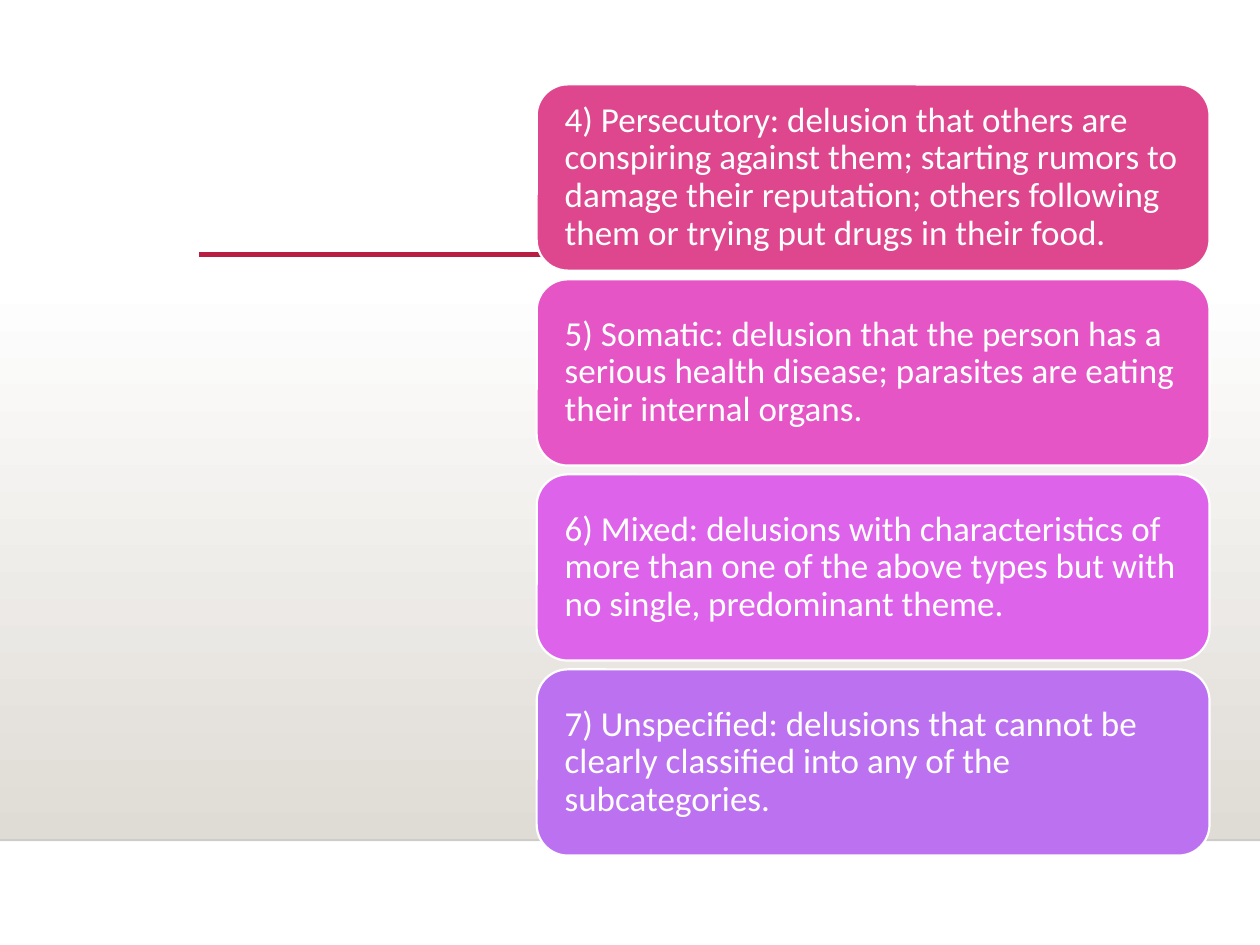
from lxml.etree import SubElement
from pptx import Presentation
from pptx.dml.color import RGBColor
from pptx.enum.shapes import MSO_CONNECTOR, MSO_SHAPE
from pptx.enum.text import MSO_ANCHOR, PP_ALIGN
from pptx.oxml.ns import qn
from pptx.util import Inches, Pt

WHITE = RGBColor(0xFF, 0xFF, 0xFF)
STONE = RGBColor(0xDF, 0xDB, 0xD5)
NEAR_BLACK = RGBColor(0x00, 0x00, 0x01)
CRIMSON = RGBColor(0xB7, 0x1E, 0x42)

DELUSION_TYPES = [
    ("4) Persecutory: delusion that others are conspiring against them; starting "
     "rumors to damage their reputation; others following them or trying put drugs "
     "in their food.", RGBColor(0xDE, 0x47, 0x8E)),
    ("5) Somatic: delusion that the person has a serious health disease; parasites "
     "are eating their internal organs.", RGBColor(0xE5, 0x55, 0xC6)),
    ("6) Mixed: delusions with characteristics of more than one of the above types "
     "but with no single, predominant theme.", RGBColor(0xDD, 0x63, 0xEB)),
    ("7) Unspecified: delusions that cannot be clearly classified into any of the "
     "subcategories.", RGBColor(0xBC, 0x72, 0xF0)),
]


def write_text(shape, text, size=20, font="Calibri", color=WHITE, inset=0.15):
    frame = shape.text_frame
    frame.word_wrap = True
    frame.vertical_anchor = MSO_ANCHOR.MIDDLE
    frame.margin_left = frame.margin_right = Inches(inset)
    frame.margin_top = frame.margin_bottom = Inches(inset)
    para = frame.paragraphs[0]
    para.alignment = PP_ALIGN.LEFT
    para.line_spacing = 0.9
    span = para.add_run()
    span.text = text
    span.font.size = Pt(size)
    span.font.name = font
    span.font.color.rgb = color


def add_rule(page, left, top, width, color, weight, opacity=100):
    """Draw a horizontal line; opacity is in percent."""
    rule = page.shapes.add_connector(
        MSO_CONNECTOR.STRAIGHT, Inches(left), Inches(top), Inches(left + width), Inches(top))
    rule.line.color.rgb = color
    rule.line.width = Pt(weight)
    if opacity < 100:
        tint = rule.line.fill._xPr.find(".//" + qn("a:srgbClr"))
        SubElement(tint, qn("a:alpha")).set("val", str(opacity * 1000))
    SubElement(rule._element.spPr, qn("a:effectLst"))


def add_backdrop(page, left, top, width, height):
    """Fade from white to stone, closed by a faint line along the bottom."""
    panel = page.shapes.add_shape(
        MSO_SHAPE.RECTANGLE, Inches(left), Inches(top), Inches(width), Inches(height))
    panel.shadow.inherit = False
    panel.line.fill.background()
    panel.fill.gradient()
    panel.fill.gradient_angle = 270
    for stop, color in zip(panel.fill.gradient_stops, (WHITE, STONE)):
        stop.color.rgb = color
    add_rule(page, left, top + height, width, NEAR_BLACK, 1, opacity=20)


def add_cards(page, left, top, width, height, gap=0.07):
    """Stack one rounded card for each delusion type, with equal gaps."""
    count = len(DELUSION_TYPES)
    card_height = (height - gap * (count - 1)) / count
    for index, (text, color) in enumerate(DELUSION_TYPES):
        card = page.shapes.add_shape(
            MSO_SHAPE.ROUNDED_RECTANGLE, Inches(left),
            Inches(top + index * (card_height + gap)), Inches(width), Inches(card_height))
        card.shadow.inherit = False
        card.fill.solid()
        card.fill.fore_color.rgb = color
        card.line.color.rgb = WHITE
        card.line.width = Pt(1.25)
        write_text(card, text)


def main():
    deck = Presentation()
    deck.slide_width, deck.slide_height = Inches(10), Inches(7.5)
    page = deck.slides.add_slide(deck.slide_layouts[6])
    page.background.fill.solid()
    page.background.fill.fore_color.rgb = WHITE
    add_backdrop(page, 0, 2.2, 10, 4.47)
    add_rule(page, 1.58, 2.02, 7.19, CRIMSON, 2.5)
    add_cards(page, 4.26, 0.67, 5.34, 6.12)
    deck.save("out.pptx")


if __name__ == "__main__":
    main()
